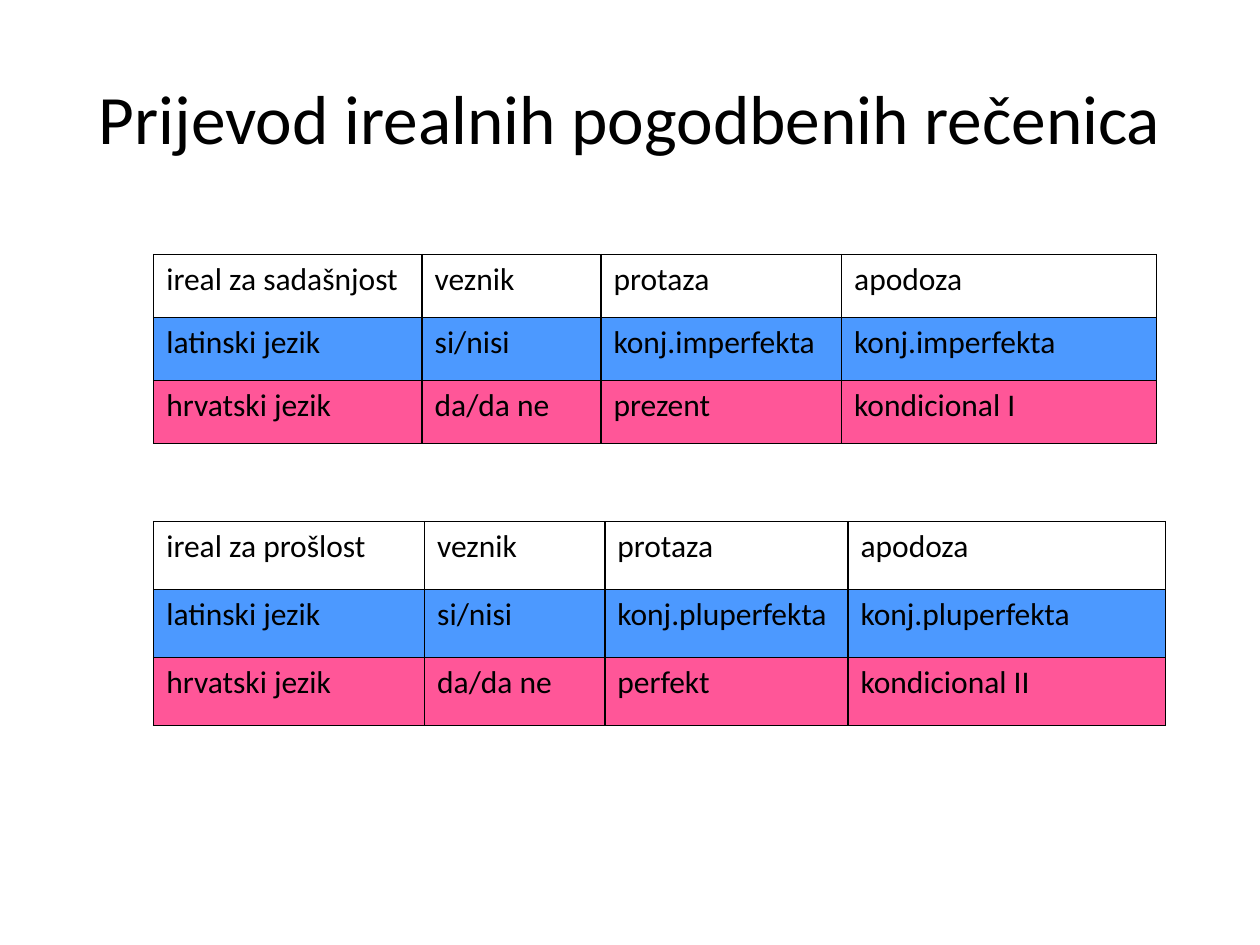
"""Build a slide with two tables on translating unreal conditional sentences."""
from lxml import etree
from pptx import Presentation
from pptx.dml.color import RGBColor
from pptx.enum.text import MSO_ANCHOR, MSO_AUTO_SIZE, PP_ALIGN
from pptx.oxml.ns import qn
from pptx.util import Inches, Pt

MIDDLE = MSO_ANCHOR.MIDDLE
NO_AUTOFIT = MSO_AUTO_SIZE.NONE
CENTER = PP_ALIGN.CENTER
FONT = "Calibri"
COLORS = {"text": "000000", "border": "000000", "latin": "4C99FF", "croatian": "FF5698"}
ROW_FILLS = [None, COLORS["latin"], COLORS["croatian"]]
TABLES = [
    {
        "top": 2.02,
        "row_height": 0.5,
        "widths": [2.13, 1.42, 1.91, 2.5],
        "rows": [
            ["ireal za sadašnjost", "veznik", "protaza", "apodoza"],
            ["latinski jezik", "si/nisi", "konj.imperfekta", "konj.imperfekta"],
            ["hrvatski jezik", "da/da ne", "prezent", "kondicional I"],
        ],
    },
    {
        "top": 4.14,
        "row_height": 0.54,
        "widths": [2.15, 1.43, 1.93, 2.52],
        "rows": [
            ["ireal za prošlost", "veznik", "protaza", "apodoza"],
            ["latinski jezik", "si/nisi", "konj.pluperfekta", "konj.pluperfekta"],
            ["hrvatski jezik", "da/da ne", "perfekt", "kondicional II"],
        ],
    },
]


def add_text(paragraph, text, size):
    run = paragraph.add_run()
    run.text = text
    run.font.name = FONT
    run.font.size = Pt(size)
    run.font.color.rgb = RGBColor.from_string(COLORS["text"])


def add_borders(cell):
    properties = cell._tc.get_or_add_tcPr()
    for side in ("a:lnL", "a:lnR", "a:lnT", "a:lnB"):
        line = etree.SubElement(properties, qn(side), w=str(Pt(1)))
        fill = etree.SubElement(line, qn("a:solidFill"))
        etree.SubElement(fill, qn("a:srgbClr"), val=COLORS["border"])


presentation = Presentation()
presentation.slide_width = Inches(10)
presentation.slide_height = Inches(7.5)
slide = presentation.slides.add_slide(presentation.slide_layouts[5])

title = slide.shapes.title
title.left, title.top = Inches(0.5), Inches(0.3)
title.width, title.height = Inches(9), Inches(1.25)
title.text_frame.word_wrap = True
title.text_frame.auto_size = NO_AUTOFIT
title.text_frame.vertical_anchor = MIDDLE
title_paragraph = title.text_frame.paragraphs[0]
title_paragraph.alignment = CENTER
add_text(title_paragraph, "Prijevod irealnih pogodbenih rečenica", 39.6)

for content in TABLES:
    rows, widths = content["rows"], content["widths"]
    table = slide.shapes.add_table(
        len(rows), len(widths), Inches(1.22), Inches(content["top"]),
        Inches(sum(widths)), Inches(content["row_height"] * len(rows)),
    ).table
    table.first_row = False
    table.horz_banding = False
    for column, width in zip(table.columns, widths):
        column.width = Inches(width)
    for row, texts, color in zip(table.rows, rows, ROW_FILLS):
        row.height = Inches(content["row_height"])
        for cell, text in zip(row.cells, texts):
            add_text(cell.text_frame.paragraphs[0], text, 18)
            add_borders(cell)
            if color:
                cell.fill.solid()
                cell.fill.fore_color.rgb = RGBColor.from_string(color)
            else:
                cell.fill.background()

presentation.save("out.pptx")
